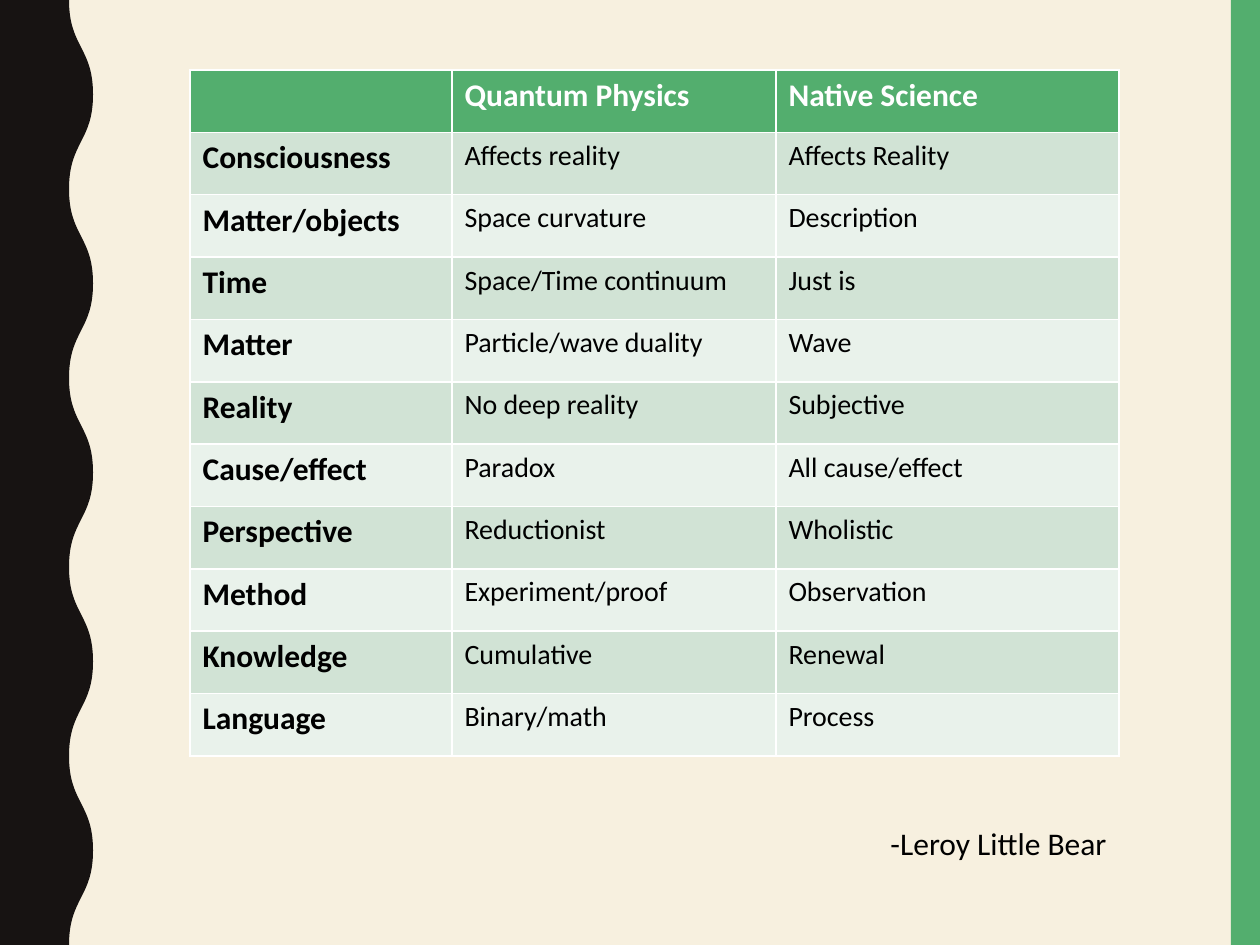
import lxml.etree
import pptx
import pptx.dml.color
import pptx.enum.shapes
import pptx.enum.text
import pptx.oxml.ns
import pptx.util

PX = 914400 / 126
SLIDE_WIDTH, SLIDE_HEIGHT = 1260, 945
GREEN, CREAM, DARK = "53AE6E", "F7F0DF", "171312"
WHITE, BLACK = "FFFFFF", "000000"
BANDS = ("D1E3D5", "E9F2EB")
COLUMN_WIDTHS = (262, 324, 343)
ROWS = (
    ("", "Quantum Physics", "Native Science"),
    ("Consciousness", "Affects reality", "Affects Reality"),
    ("Matter/objects", "Space curvature", "Description"),
    ("Time", "Space/Time continuum", "Just is"),
    ("Matter", "Particle/wave duality", "Wave"),
    ("Reality", "No deep reality", "Subjective"),
    ("Cause/effect", "Paradox", "All cause/effect"),
    ("Perspective", "Reductionist", "Wholistic"),
    ("Method", "Experiment/proof", "Observation"),
    ("Knowledge", "Cumulative", "Renewal"),
    ("Language", "Binary/math", "Process"),
)


def emu(length):
    """Turn a length in px into EMU."""
    return pptx.util.Emu(round(length * PX))


def color(value):
    """Turn a hex string into an RGB colour."""
    return pptx.dml.color.RGBColor.from_string(value)


def paint(shape, value):
    """Give a shape a flat fill without line or shadow."""
    shape.shadow.inherit = False
    shape.fill.solid()
    shape.fill.fore_color.rgb = color(value)
    shape.line.fill.background()


def write(frame, text, size, value, bold=False):
    """Put one formatted line of text into a text frame."""
    frame.text = text
    for span in frame.paragraphs[0].runs:
        span.font.name = "Calibri"
        span.font.size = pptx.util.Pt(size)
        span.font.bold = bold
        span.font.color.rgb = color(value)


def add_stripe(page, left, top, width, height):
    """Draw the green stripe."""
    stripe = page.shapes.add_shape(
        pptx.enum.shapes.MSO_SHAPE.RECTANGLE,
        emu(left), emu(top), emu(width), emu(height))
    paint(stripe, GREEN)


def bend_segment(segment, start):
    """Turn a straight path segment into an S-curve and return its end."""
    end = segment[0]
    x, y = int(end.get("x")), int(end.get("y"))
    middle = (start[1] + y) // 2
    segment.tag = pptx.oxml.ns.qn("a:cubicBezTo")
    for index, control_x in enumerate((start[0], x)):
        control = lxml.etree.Element(
            pptx.oxml.ns.qn("a:pt"), x=str(control_x), y=str(middle))
        segment.insert(index, control)
    return x, y


def add_wave(page, left, top, width, height):
    """Draw the dark band whose right edge swings in ten S-curves."""
    swing, bends = 24, 10
    edge = [(left + width - swing * (1 - bend % 2), top + height * bend / bends)
            for bend in range(bends + 1)]
    corners = [(left, top + height), (left, top)]
    points = [(emu(x), emu(y)) for x, y in edge + corners]
    builder = page.shapes.build_freeform(*points[0], scale=1.0)
    builder.add_line_segments(points[1:], close=True)
    wave = builder.convert_to_shape()
    segments = list(wave._element.iter(pptx.oxml.ns.qn("a:lnTo")))
    start = (emu(width - swing), 0)
    for segment in segments[:bends]:
        start = bend_segment(segment, start)
    paint(wave, DARK)


def add_comparison(page, left, top, width, height):
    """Build the comparison table."""
    table = page.shapes.add_table(
        len(ROWS), len(COLUMN_WIDTHS),
        emu(left), emu(top), emu(width), emu(height)).table
    for column, column_width in zip(table.columns, COLUMN_WIDTHS):
        column.width = emu(column_width)
    for row, texts in enumerate(ROWS):
        table.rows[row].height = emu(height / len(ROWS))
        header = row == 0
        for column, text in enumerate(texts):
            cell = table.cell(row, column)
            strong = header or column == 0
            write(cell.text_frame, text, 18 if strong else 16,
                  WHITE if header else BLACK, strong)
            cell.fill.solid()
            cell.fill.fore_color.rgb = color(
                GREEN if header else BANDS[(row - 1) % 2])


def add_credit(page, left, top, width, height):
    """Add the right-aligned name of the speaker."""
    box = page.shapes.add_textbox(emu(left), emu(top), emu(width), emu(height))
    box.text_frame.word_wrap = True
    box.text_frame.auto_size = pptx.enum.text.MSO_AUTO_SIZE.SHAPE_TO_FIT_TEXT
    write(box.text_frame, "-Leroy Little Bear", 18, BLACK)
    box.text_frame.paragraphs[0].alignment = pptx.enum.text.PP_ALIGN.RIGHT


def main():
    """Build and save the deck."""
    deck = pptx.Presentation()
    deck.slide_width, deck.slide_height = emu(SLIDE_WIDTH), emu(SLIDE_HEIGHT)
    page = deck.slides.add_slide(deck.slide_layouts[6])
    page.background.fill.solid()
    page.background.fill.fore_color.rgb = color(CREAM)
    add_stripe(page, 1231, 0, 29, SLIDE_HEIGHT)
    add_wave(page, 0, 0, 93, SLIDE_HEIGHT)
    add_comparison(page, 190, 70, sum(COLUMN_WIDTHS), 686)
    add_credit(page, 747, 818, 372, 50)
    deck.save("out.pptx")


if __name__ == "__main__":
    main()
